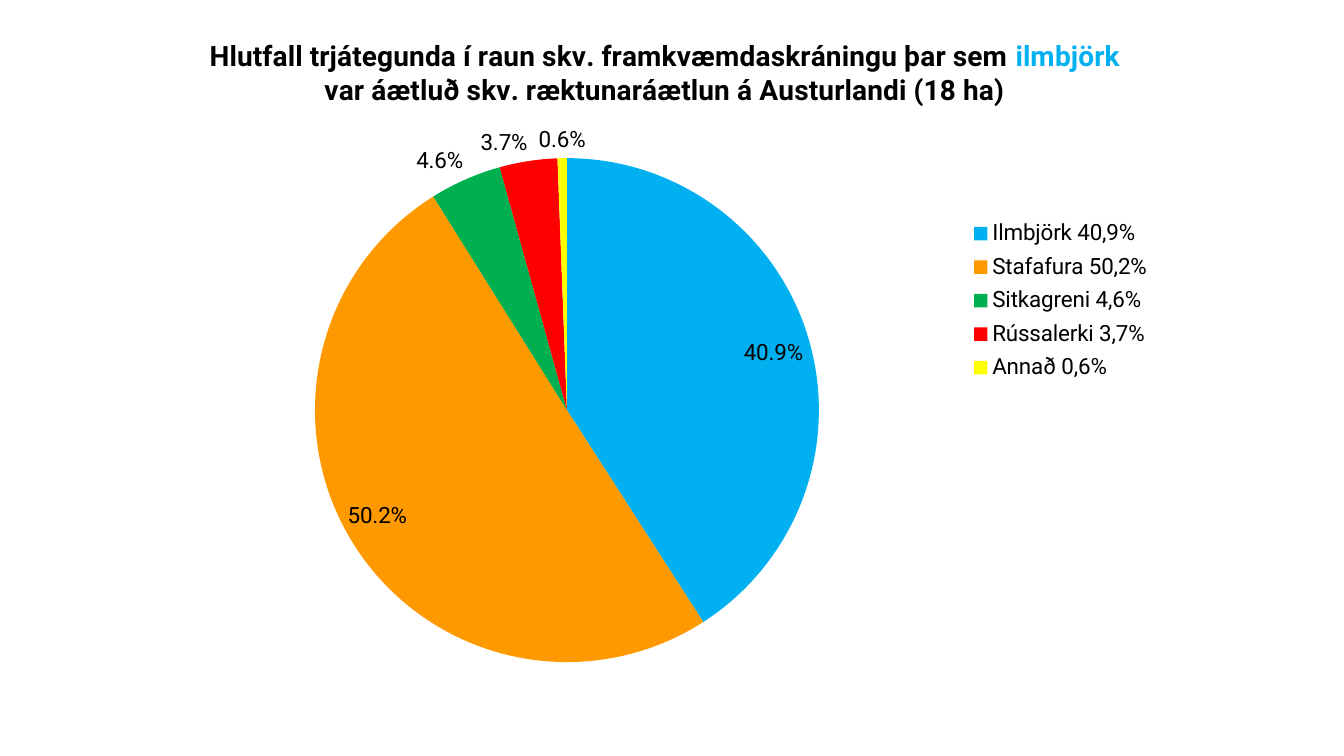
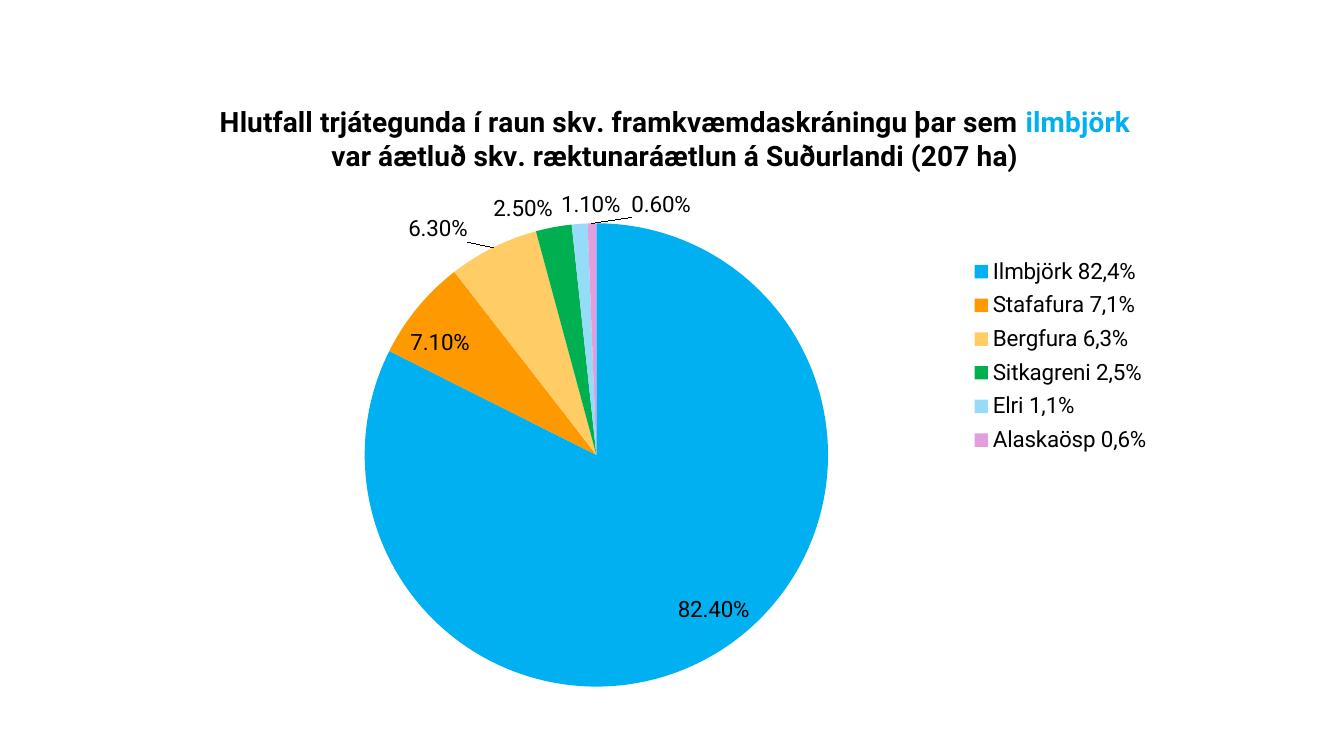
"""Two slides with pie charts of tree species planted where birch was planned."""
from lxml import etree
from pptx import Presentation
from pptx.chart.data import CategoryChartData as Data
from pptx.dml.color import RGBColor as RGB
from pptx.enum.chart import XL_CHART_TYPE as Kind, XL_LABEL_POSITION as Spot, XL_LEGEND_POSITION as Side
from pptx.oxml.ns import qn
from pptx.util import Pt

HUES = {"text": "000000", "Ilmbjörk": "00B0F0", "Stafafura": "FF9900", "Bergfura": "FFCC66",
        "Sitkagreni": "00B050", "Rússalerki": "FF0000", "Annað": "FFFF00",
        "Elri": "96DCF8", "Alaskaösp": "E59EDD"}
FONT = "Roboto"
ROW = 25.1

PIES = [
    {"box": (61.2, 12.2, 827.3, 470.2), "pie": (225, 113, 360), "key": (687.5, 152),
     "place": "Austurlandi (18 ha)", "form": "0.0%", "inner": 2, "moved": {1: (-0.01, -0.02)},
     "parts": {"Ilmbjörk": 40.9, "Stafafura": 50.2, "Sitkagreni": 4.6, "Rússalerki": 3.7, "Annað": 0.6}},
    {"box": (70.6, 59.8, 823, 441.4), "pie": (260.5, 159.5, 331), "key": (687.5, 179),
     "place": "Suðurlandi (207 ha)", "form": "0.00%", "inner": 2,
     "moved": {0: (0.03, -0.04), 1: (-0.01, 0.03), 2: (-0.02, 0), 4: (0.01, 0), 5: (0.06, 0)},
     "parts": {"Ilmbjörk": 82.4, "Stafafura": 7.1, "Bergfura": 6.3, "Sitkagreni": 2.5,
               "Elri": 1.1, "Alaskaösp": 0.6}},
]


def write(par, text, size=20, bold=True, hue="text"):
    """Add one formatted run to a paragraph."""
    run = par.add_run()
    run.text = text
    font = run.font
    font.name, font.size, font.bold = FONT, Pt(size), bold
    font.color.rgb = RGB.from_string(HUES[hue])


def place(node, after=None, **vals):
    """Give a chart part a manual layout."""
    for old in node.findall(qn("c:layout")):
        node.remove(old)
    lay = etree.Element(qn("c:layout"))
    inner = etree.SubElement(lay, qn("c:manualLayout"))
    for tag, val in vals.items():
        etree.SubElement(inner, qn("c:" + tag)).set("val", str(val))
    node.insert(0 if after is None else node.index(node.find(qn(after))) + 1, lay)


deck = Presentation()
deck.slide_width, deck.slide_height = Pt(960), Pt(540)

for item in PIES:
    slide = deck.slides.add_slide(deck.slide_layouts[6])
    parts = item["parts"]
    data = Data(number_format=item["form"])
    data.categories = [f"{name} {val}%".replace(".", ",") for name, val in parts.items()]
    data.add_series("Series 1", [round(val / 100, 3) for val in parts.values()])
    left, top, wide, high = item["box"]
    chart = slide.shapes.add_chart(Kind.PIE, *map(Pt, item["box"]), data).chart
    chart.font.name, chart.font.size = FONT, Pt(10)
    chart.font.color.rgb = RGB.from_string(HUES["text"])

    frame = chart.chart_title.text_frame
    first = frame.paragraphs[0]
    write(first, "Hlutfall trjátegunda í raun skv. framkvæmdaskráningu þar sem ")
    write(first, "ilmbjörk", hue="Ilmbjörk")
    write(frame.add_paragraph(), "var áætluð skv. ræktunaráætlun á " + item["place"])

    chart.has_legend = True
    key = chart.legend
    key.position, key.include_in_layout = Side.RIGHT, False
    key.font.size = Pt(16)

    plot = chart.plots[0]
    plot.vary_by_categories = True
    ser = plot.series[0]
    tags = ser.data_labels
    tags.show_value = True
    tags.number_format, tags.number_format_is_linked = item["form"], False
    tags.font.size = Pt(16)
    for i, name in enumerate(parts):
        point = ser.points[i]
        point.format.fill.solid()
        point.format.fill.fore_color.rgb = RGB.from_string(HUES[name])
        point.data_label.font.size = Pt(16)
        point.data_label.position = Spot.INSIDE_END if i < item["inner"] else Spot.OUTSIDE_END

    root = chart.element
    for i, tag in enumerate(root.iter(qn("c:dLbl"))):
        form = etree.Element(qn("c:numFmt"), formatCode=item["form"], sourceLinked="0")
        tag.insert(1, form)
        if i in item["moved"]:
            x, y = item["moved"][i]
            place(tag, "c:idx", x=x, y=y)

    x, y, size = item["pie"]
    place(root.find(".//" + qn("c:plotArea")), layoutTarget="inner", xMode="edge", yMode="edge",
          x=(x - left) / wide, y=(y - top) / high, w=size / wide, h=size / high)
    x, y = item["key"]
    place(root.find(".//" + qn("c:legend")), "c:legendPos", xMode="edge", yMode="edge",
          x=(x - left) / wide, y=(y - top) / high, w=140 / wide, h=ROW * len(parts) / high)

deck.save("out.pptx")
